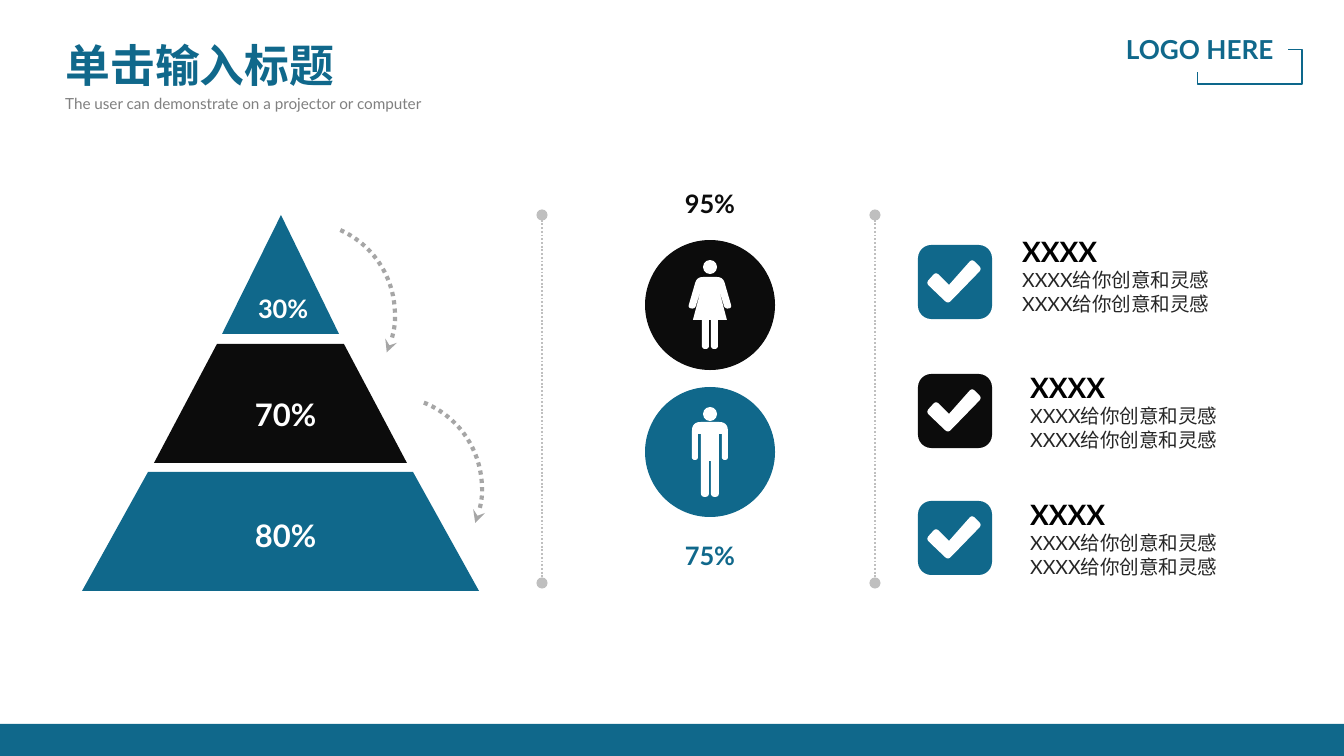
import math
from dataclasses import dataclass
import lxml.etree
import pptx
import pptx.util
import pptx.dml.color
import pptx.enum.dml
import pptx.enum.shapes
import pptx.enum.text
import pptx.oxml.ns


@dataclass(frozen=True)
class Theme:
    teal: str = "10688B"
    dark: str = "0C0C0C"
    black: str = "000000"
    white: str = "FFFFFF"
    body: str = "262626"
    muted: str = "808080"
    arrow: str = "A6A6A6"
    divider: str = "BFBFBF"
    frame: str = "0D678B"
    font: str = "Lato"
    title_size: float = 24
    level_size: float = 16.6
    heading_size: float = 15
    logo_size: float = 14
    percent_size: float = 13.6
    body_size: float = 10.5
    subtitle_size: float = 8.2


theme = Theme()
px = 914400 / 134.4
rgb = pptx.dml.color.RGBColor.from_string
qn = pptx.oxml.ns.qn
Align = pptx.enum.text.PP_ALIGN
Anchor = pptx.enum.text.MSO_ANCHOR
Shape = pptx.enum.shapes.MSO_SHAPE
Connector = pptx.enum.shapes.MSO_CONNECTOR

deck = pptx.Presentation()
deck.slide_width = round(1344 * px)
deck.slide_height = round(756 * px)
page = deck.slides.add_slide(deck.slide_layouts[5])


def write(text, place, size, color, bold=True, align=Align.LEFT, anchor=Anchor.TOP,
          wrap=True, inset=True, spacing=1.0, box=None, detail=None):
    left, top, width, height = [round(value * px) for value in place]
    if box is None:
        box = page.shapes.add_textbox(left, top, width, height)
    box.left, box.top, box.width, box.height = left, top, width, height
    frame = box.text_frame
    frame.word_wrap = wrap
    frame.auto_size = pptx.enum.text.MSO_AUTO_SIZE.NONE
    frame.vertical_anchor = anchor
    if not inset:
        frame.margin_left = frame.margin_top = frame.margin_right = frame.margin_bottom = 0
    rows = [(text, size, color, bold)]
    if detail:
        rows.append((detail, theme.body_size, theme.body, False))
    for index, (words, points, tint, heavy) in enumerate(rows):
        para = frame.add_paragraph() if index else frame.paragraphs[0]
        para.alignment = align
        para.line_spacing = spacing
        span = para.add_run()
        span.text = words
        span.font.name = theme.font
        span.font.size = pptx.util.Pt(points)
        span.font.bold = heavy
        span.font.color.rgb = rgb(tint)


def draw_outline(corners, color, left=0, top=0):
    outline = []
    for index, (x, y, radius) in enumerate(corners):
        corner = complex(x, y)
        before = complex(*corners[index - 1][:2]) - corner
        after = complex(*corners[(index + 1) % len(corners)][:2]) - corner
        reach = min(radius, abs(before) / 2, abs(after) / 2)
        start = corner + before / abs(before) * reach
        end = corner + after / abs(after) * reach
        steps = 6 if radius else 0
        for step in range(steps + 1):
            t = step / max(steps, 1)
            outline.append((1 - t) ** 2 * start + 2 * t * (1 - t) * corner + t ** 2 * end)
    points = [(round((left + p.real) * px), round((top + p.imag) * px)) for p in outline]
    builder = page.shapes.build_freeform(*points[0])
    builder.add_line_segments(points[1:], close=True)
    shape = builder.convert_to_shape()
    shape.shadow.inherit = False
    shape.fill.solid()
    shape.fill.fore_color.rgb = rgb(color)
    shape.line.fill.background()


write("单击输入标题", (52, 31, 300, 67), theme.title_size, theme.teal,
      wrap=False, box=page.shapes.title)
write("The user can demonstrate on a projector or computer", (52, 85, 723, 34),
      theme.subtitle_size, theme.muted, bold=False, spacing=1.14)
write("LOGO HERE", (1107, 27, 180, 46), theme.logo_size, theme.teal, align=Align.RIGHT)

levels = [
    ("30%", 281, 281, 222, 339, 215, theme.teal, (258, 297, 46, 27), theme.percent_size),
    ("70%", 217, 344, 154, 407, 344, theme.dark, (255, 402, 51, 31), theme.level_size),
    ("80%", 148, 413, 82, 479, 472, theme.teal, (255, 523, 51, 31), theme.level_size),
]
for label, top_left, top_right, base_left, base_right, top, color, place, size in levels:
    crown = [(x, top, 0) for x in sorted({top_left, top_right})]
    draw_outline(crown + [(base_right, top + 119, 0), (base_left, top + 119, 0)], color)
    write(label, place, size, theme.white, anchor=Anchor.BOTTOM, wrap=False, inset=False)

checks = [(245, theme.teal, 1009, 228), (374, theme.dark, 1017, 364), (501, theme.teal, 1017, 491)]
solids = [
    (Shape.OVAL, 645, 240, 130, 130, theme.dark),
    (Shape.OVAL, 645, 387, 130, 130, theme.teal),
    (Shape.OVAL, 703, 260, 14, 14, theme.white),
    (Shape.OVAL, 703, 407, 14, 14, theme.white),
    (Shape.RECTANGLE, 0, 724, 1344, 35, theme.teal),
]
solids += [(Shape.ROUNDED_RECTANGLE, 918, top, 74, 74, color) for top, color, _, _ in checks]
for kind, left, top, width, height, color in solids:
    shape = page.shapes.add_shape(kind, *[round(v * px) for v in (left, top, width, height)])
    shape.shadow.inherit = False
    shape.fill.solid()
    shape.fill.fore_color.rgb = rgb(color)
    shape.line.fill.background()
    if kind == Shape.ROUNDED_RECTANGLE:
        shape.adjustments[0] = 0.18

tick = [(54, 14, 4), (64, 24, 4), (30, 59, 4), (8, 38, 4), (18, 27, 4), (31, 40, 0)]
for top, color, text_left, text_top in checks:
    draw_outline(tick, theme.white, 918, top)
    write("XXXX", (text_left, text_top, 226, 95), theme.heading_size, theme.black,
          detail="XXXX给你创意和灵感XXXX给你创意和灵感")

woman = [(13, 277, 6), (22, 308, 4), (15, 309, 4), (8, 286, 0), (17, 320, 0),
         (8, 320, 0), (8, 349, 4), (1, 349, 4), (1, 320, 0)]
man = [(18, 422, 9), (18, 460, 3), (12, 460, 3), (12, 434, 0), (9, 434, 0),
       (9, 497, 4), (1, 497, 4), (1, 461, 0)]
for half in (woman, man):
    draw_outline(half + [(-x, y, radius) for x, y, radius in reversed(half)], theme.white, 710)
for label, top, color in [("95%", 188, theme.dark), ("75%", 540, theme.teal)]:
    write(label, (687, top, 46, 27), theme.percent_size, color,
          align=Align.CENTER, wrap=False, inset=False)

strokes = []
for left, top, angle in [(210, 222, 24.2), (297, 396, 21.9)]:
    arc = page.shapes.add_shape(Shape.ARC, *[round(v * px) for v in (left, top, 185, 185)])
    arc.rotation = angle
    arc.fill.background()
    strokes.append((arc, theme.arrow, 2.25, True, {"tailEnd": "stealth"}))
for x in (542, 875):
    divider = page.shapes.add_connector(
        Connector.STRAIGHT, *[round(v * px) for v in (x, 215, x, 583)])
    strokes.append((divider, theme.divider, 1, True, {"headEnd": "oval", "tailEnd": "oval"}))

bracket = page.shapes.add_connector(
    Connector.ELBOW, *[round(v * px) for v in (1254, 106, 1231, 16)])
bracket.element.spPr.find(qn("a:xfrm")).set("rot", "5400000")
geometry = bracket.element.spPr.find(qn("a:prstGeom"))
geometry.set("prst", "bentConnector4")
for name, value in [("adj1", -49500), ("adj2", 116200)]:
    lxml.etree.SubElement(geometry.find(qn("a:avLst")), qn("a:gd"), name=name, fmla=f"val {value}")
strokes.append((bracket, theme.frame, 0.75, False, {}))

for stroke, color, weight, dotted, ends in strokes:
    stroke.line.color.rgb = rgb(color)
    stroke.line.width = pptx.util.Pt(weight)
    if dotted:
        stroke.line.dash_style = pptx.enum.dml.MSO_LINE.ROUND_DOT
    properties = stroke.element.spPr
    for end, style in ends.items():
        lxml.etree.SubElement(properties.find(qn("a:ln")), qn(f"a:{end}"), type=style)
    lxml.etree.SubElement(properties, qn("a:effectLst"))

deck.save("out.pptx")
